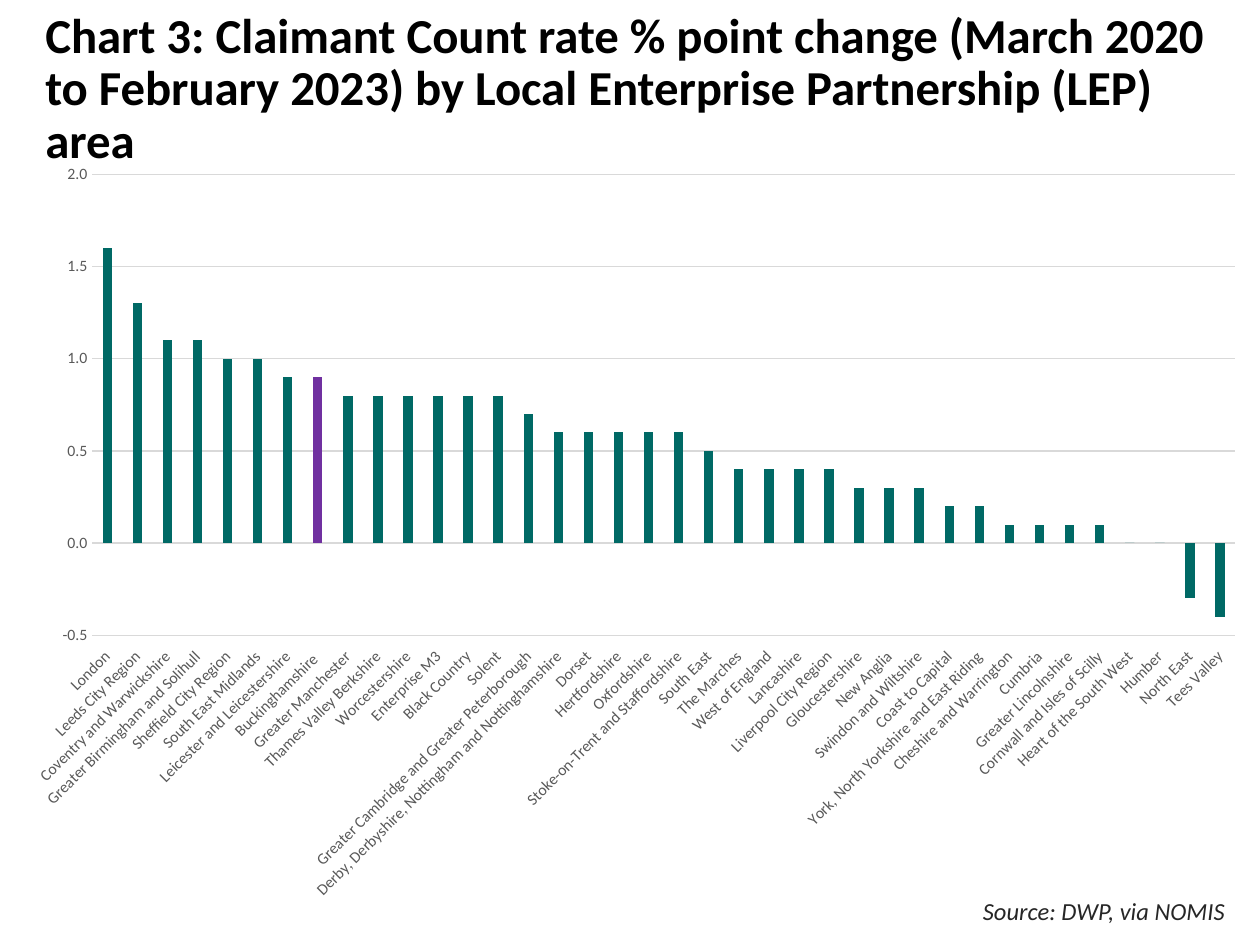
import pptx
import pptx.chart.data
import pptx.dml.color
import pptx.enum.chart
import pptx.enum.text
import pptx.util

Inches = pptx.util.Inches
Pt = pptx.util.Pt
RGBColor = pptx.dml.color.RGBColor

BLACK = RGBColor(0x00, 0x00, 0x00)
DARK = RGBColor(0x26, 0x26, 0x26)
GREY = RGBColor(0x59, 0x59, 0x59)
RULE = RGBColor(0xD9, 0xD9, 0xD9)
TEAL = RGBColor(0x00, 0x69, 0x65)
PURPLE = RGBColor(0x70, 0x30, 0xA0)
HIGHLIGHT = "Buckinghamshire "

RATE_CHANGES = [
    ("London", 1.6),
    ("Leeds City Region", 1.3),
    ("Coventry and Warwickshire", 1.1),
    ("Greater Birmingham and Solihull", 1.1),
    ("Sheffield City Region", 1.0),
    ("South East Midlands", 1.0),
    ("Leicester and Leicestershire", 0.9),
    (HIGHLIGHT, 0.9),
    ("Greater Manchester", 0.8),
    ("Thames Valley Berkshire", 0.8),
    ("Worcestershire", 0.8),
    ("Enterprise M3", 0.8),
    ("Black Country", 0.8),
    ("Solent", 0.8),
    ("Greater Cambridge and Greater Peterborough", 0.7),
    ("Derby, Derbyshire, Nottingham and Nottinghamshire", 0.6),
    ("Dorset", 0.6),
    ("Hertfordshire", 0.6),
    ("Oxfordshire", 0.6),
    ("Stoke-on-Trent and Staffordshire", 0.6),
    ("South East", 0.5),
    ("The Marches", 0.4),
    ("West of England", 0.4),
    ("Lancashire", 0.4),
    ("Liverpool City Region", 0.4),
    ("Gloucestershire", 0.3),
    ("New Anglia", 0.3),
    ("Swindon and Wiltshire", 0.3),
    ("Coast to Capital", 0.2),
    ("York, North Yorkshire and East Riding", 0.2),
    ("Cheshire and Warrington", 0.1),
    ("Cumbria", 0.1),
    ("Greater Lincolnshire", 0.1),
    ("Cornwall and Isles of Scilly", 0.1),
    ("Heart of the South West", 0),
    ("Humber", 0),
    ("North East", -0.3),
    ("Tees Valley", -0.4),
]


def set_attrs(obj, **values):
    """Set each named attribute on the object."""
    for name, value in values.items():
        setattr(obj, name, value)


def set_font(font, color, **values):
    """Apply Calibri, a colour and other font values."""
    set_attrs(font, name="Calibri", **values)
    font.color.rgb = color


def set_line(line, color):
    """Give a chart line its colour and width."""
    line.color.rgb = color
    line.width = Pt(0.75)


def add_title(s, text):
    """Place and format the title placeholder."""
    sp = s.shapes.title
    set_attrs(sp, left=Inches(0.26), top=Inches(0.45),
              width=Inches(9.48), height=Inches(1.02))
    tf = sp.text_frame
    set_attrs(tf, word_wrap=True, margin_bottom=Inches(0.54),
              auto_size=pptx.enum.text.MSO_AUTO_SIZE.NONE,
              vertical_anchor=pptx.enum.text.MSO_ANCHOR.MIDDLE)
    p = tf.paragraphs[0]
    set_attrs(p, alignment=pptx.enum.text.PP_ALIGN.LEFT, line_spacing=0.9)
    r = p.add_run()
    r.text = text
    set_font(r.font, BLACK, size=Pt(27.9), bold=True)


def add_source(s, text):
    """Add the right-aligned source line."""
    sp = s.shapes.add_textbox(Inches(7.44), Inches(7.06), Inches(2.38), Inches(0.34))
    tf = sp.text_frame
    tf.word_wrap = True
    p = tf.paragraphs[0]
    p.alignment = pptx.enum.text.PP_ALIGN.RIGHT
    r = p.add_run()
    r.text = text
    set_font(r.font, DARK, size=Pt(14), italic=True)


def format_axes(chart):
    """Style both axes, their labels and the gridlines."""
    no_tick = pptx.enum.chart.XL_TICK_MARK.NONE
    cat, val = chart.category_axis, chart.value_axis
    for axis in (cat, val):
        set_attrs(axis, major_tick_mark=no_tick, minor_tick_mark=no_tick)
        set_font(axis.tick_labels.font, GREY, size=Pt(9))
    cat.tick_label_position = pptx.enum.chart.XL_TICK_LABEL_POSITION.LOW
    set_line(cat.format.line, RULE)
    cat._element.xpath("c:txPr/a:bodyPr")[0].set("rot", "-2700000")
    set_attrs(val, minimum_scale=-0.5, maximum_scale=2, major_unit=0.5,
              has_major_gridlines=True)
    set_attrs(val.tick_labels, number_format="#,##0.0", number_format_is_linked=False)
    val.format.line.fill.background()
    set_line(val.major_gridlines.format.line, RULE)


def add_rate_chart(s):
    """Add the column chart with one highlighted area."""
    names, values = zip(*RATE_CHANGES)
    data = pptx.chart.data.CategoryChartData()
    data.categories = names
    data.add_series("Series 1", values)
    chart = s.shapes.add_chart(
        pptx.enum.chart.XL_CHART_TYPE.COLUMN_CLUSTERED,
        Inches(0.09), Inches(1.19), Inches(9.91), Inches(6.07), data).chart
    set_attrs(chart, has_legend=False, has_title=False)
    set_font(chart.font, BLACK, size=Pt(10))
    plot = chart.plots[0]
    set_attrs(plot, gap_width=219, overlap=-27, vary_by_categories=False)
    series = plot.series[0]
    series.invert_if_negative = False
    point = series.points[names.index(HIGHLIGHT)]
    for item, color in ((series, TEAL), (point, PURPLE)):
        item.format.fill.solid()
        item.format.fill.fore_color.rgb = color
    format_axes(chart)


def main():
    """Build and save the slide."""
    prs = pptx.Presentation()
    set_attrs(prs, slide_width=Inches(10), slide_height=Inches(7.5))
    s = prs.slides.add_slide(prs.slide_layouts[5])
    add_title(s, "Chart 3: Claimant Count rate % point change (March 2020 to "
                 "February 2023) by Local Enterprise Partnership (LEP) area")
    add_source(s, "Source: DWP, via NOMIS")
    add_rate_chart(s)
    prs.save("out.pptx")


if __name__ == "__main__":
    main()
